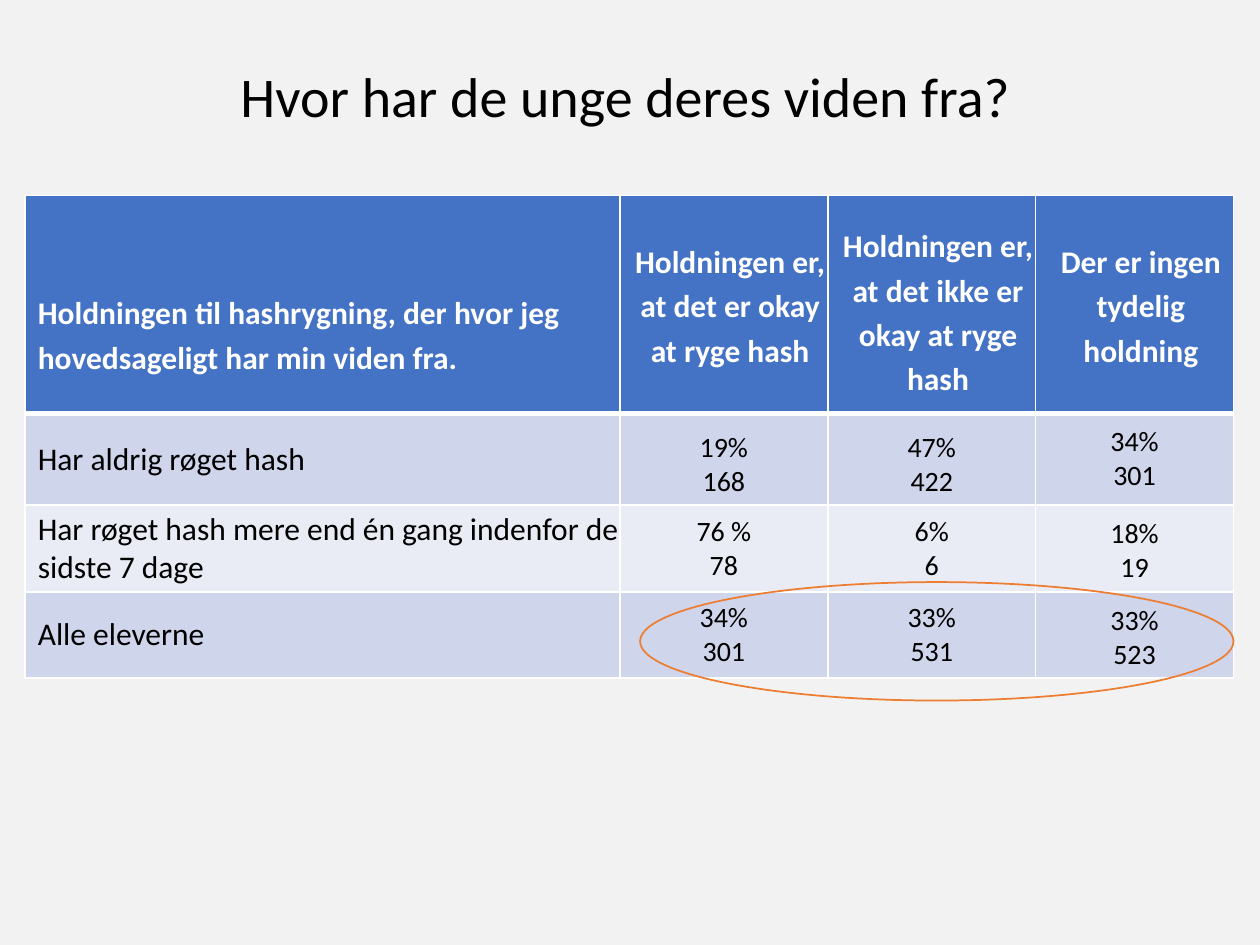
"""Build a slide with a table of where young people get their knowledge from."""
import dataclasses

import lxml.etree
import pptx
import pptx.dml.color
import pptx.enum.shapes
import pptx.enum.text
import pptx.oxml.ns
import pptx.presentation
import pptx.slide
import pptx.table
import pptx.util

Inches = pptx.util.Inches
Pt = pptx.util.Pt
Align = pptx.enum.text.PP_ALIGN
Anchor = pptx.enum.text.MSO_ANCHOR

FONT = "Calibri"
COLORS = {
    "background": "F2F2F2",
    "header": "4472C4",
    "odd": "CFD5EA",
    "even": "E9EBF5",
    "white": "FFFFFF",
    "black": "000000",
    "ring": "ED7D31",
}
COLUMN_WIDTHS = (4.72, 1.65, 1.65, 1.57)
ROW_HEIGHTS = (1.73, 0.73, 0.69, 0.68)


@dataclasses.dataclass(frozen=True)
class CellStyle:
    """Describe the look of a kind of table cell."""

    size: int
    color: str
    bold: bool = False
    align: Align = Align.CENTER
    left: float = 0
    spacing: float = 0
    line_spacing: float = 1.0


@dataclasses.dataclass(frozen=True)
class Entry:
    """Hold the lines of a cell and how they sit in it."""

    lines: tuple[str, ...]
    top: float = 0
    anchor: Anchor = Anchor.MIDDLE


HEADING = CellStyle(18, "white", True, left=0.1, spacing=3.8, line_spacing=1.15)
HEADING_LEFT = dataclasses.replace(HEADING, align=Align.LEFT)
LABEL = CellStyle(18, "black", align=Align.LEFT, left=0.1, spacing=6)
VALUE = CellStyle(16, "black")

ROWS = (
    (
        Entry(("Holdningen til hashrygning, der hvor jeg hovedsageligt har min viden fra.",), 0.46),
        Entry(("Holdningen er, at det er okay at ryge hash",)),
        Entry(("Holdningen er, at det ikke er okay at ryge hash",), 0.1),
        Entry(("Der er ingen tydelig holdning",)),
    ),
    (
        Entry(("Har aldrig røget hash",)),
        Entry(("19%", "168"), 0.09),
        Entry(("47%", "422"), 0.09),
        Entry(("34%", "301"), 0.09, Anchor.TOP),
    ),
    (
        Entry(("Har røget hash mere end én gang indenfor de sidste 7 dage",)),
        Entry(("76 %", "78")),
        Entry(("6%", "6")),
        Entry(("18%", "19"), 0.09, Anchor.TOP),
    ),
    (
        Entry(("Alle eleverne",)),
        Entry(("34%", "301")),
        Entry(("33%", "531")),
        Entry(("33%", "523"), 0.09, Anchor.TOP),
    ),
)


def rgb(name: str) -> pptx.dml.color.RGBColor:
    """Return the named colour."""
    return pptx.dml.color.RGBColor.from_string(COLORS[name])


def set_borders(cell: pptx.table._Cell, top: float, bottom: float) -> None:
    """Give a cell white borders on all sides."""
    qn = pptx.oxml.ns.qn
    properties = cell._tc.get_or_add_tcPr()
    widths = {"a:lnL": 1, "a:lnR": 1, "a:lnT": top, "a:lnB": bottom}
    for index, (tag, width) in enumerate(widths.items()):
        line = lxml.etree.Element(qn(tag), w=str(Pt(width)))
        fill = lxml.etree.SubElement(line, qn("a:solidFill"))
        lxml.etree.SubElement(fill, qn("a:srgbClr"), val=COLORS["white"])
        properties.insert(index, line)


def fill_cell(cell: pptx.table._Cell, entry: Entry, style: CellStyle, fill: str) -> None:
    """Write an entry into a cell and style it."""
    cell.fill.solid()
    cell.fill.fore_color.rgb = rgb(fill)
    cell.vertical_anchor = entry.anchor
    cell.margin_left = Inches(style.left)
    cell.margin_top = Inches(entry.top)
    cell.margin_right = cell.margin_bottom = Inches(0)
    cell.text_frame.text = "\n".join(entry.lines)
    for paragraph in cell.text_frame.paragraphs:
        paragraph.alignment = style.align
        paragraph.line_spacing = style.line_spacing
        paragraph.space_before = paragraph.space_after = Pt(style.spacing)
        paragraph.font.name = FONT
        paragraph.font.size = Pt(style.size)
        paragraph.font.bold = style.bold
        paragraph.font.color.rgb = rgb(style.color)


def add_knowledge_table(slide: pptx.slide.Slide) -> None:
    """Add the table of attitudes and answers."""
    table = slide.shapes.add_table(
        len(ROW_HEIGHTS), len(COLUMN_WIDTHS), Inches(0.2), Inches(1.55),
        Inches(sum(COLUMN_WIDTHS)), Inches(sum(ROW_HEIGHTS)),
    ).table
    for column, width in zip(table.columns, COLUMN_WIDTHS):
        column.width = Inches(width)
    for row_index, entries in enumerate(ROWS):
        table.rows[row_index].height = Inches(ROW_HEIGHTS[row_index])
        if row_index == 0:
            fill, first_style, style = "header", HEADING_LEFT, HEADING
        else:
            fill, first_style, style = ("odd" if row_index % 2 else "even"), LABEL, VALUE
        for column_index, entry in enumerate(entries):
            cell = table.cell(row_index, column_index)
            fill_cell(cell, entry, style if column_index else first_style, fill)
            set_borders(cell, 3 if row_index == 1 else 1, 3 if row_index == 0 else 1)


def add_title(slide: pptx.slide.Slide, text: str) -> None:
    """Add the title of the slide."""
    shape = slide.shapes.add_textbox(Inches(1.81), Inches(0.44), Inches(6.37), Inches(0.64))
    shape.text_frame.word_wrap = False
    shape.text_frame.auto_size = pptx.enum.text.MSO_AUTO_SIZE.SHAPE_TO_FIT_TEXT
    paragraph = shape.text_frame.paragraphs[0]
    paragraph.text = text
    paragraph.font.name = FONT
    paragraph.font.size = Pt(32)
    paragraph.font.color.rgb = rgb("black")


def add_ring(slide: pptx.slide.Slide) -> None:
    """Ring the totals in the last row."""
    shape = slide.shapes.add_shape(
        pptx.enum.shapes.MSO_SHAPE.OVAL,
        Inches(5.08), Inches(4.62), Inches(4.71), Inches(0.94),
    )
    shape.shadow.inherit = False
    shape.fill.background()
    shape.line.color.rgb = rgb("ring")
    shape.line.width = Pt(1)


def main() -> None:
    """Build and save the presentation."""
    presentation = pptx.Presentation()
    presentation.slide_width = Inches(10)
    presentation.slide_height = Inches(7.5)
    slide = presentation.slides.add_slide(presentation.slide_layouts[6])
    slide.background.fill.solid()
    slide.background.fill.fore_color.rgb = rgb("background")
    add_knowledge_table(slide)
    add_title(slide, "Hvor har de unge deres viden fra?")
    add_ring(slide)
    presentation.save("out.pptx")


if __name__ == "__main__":
    main()
